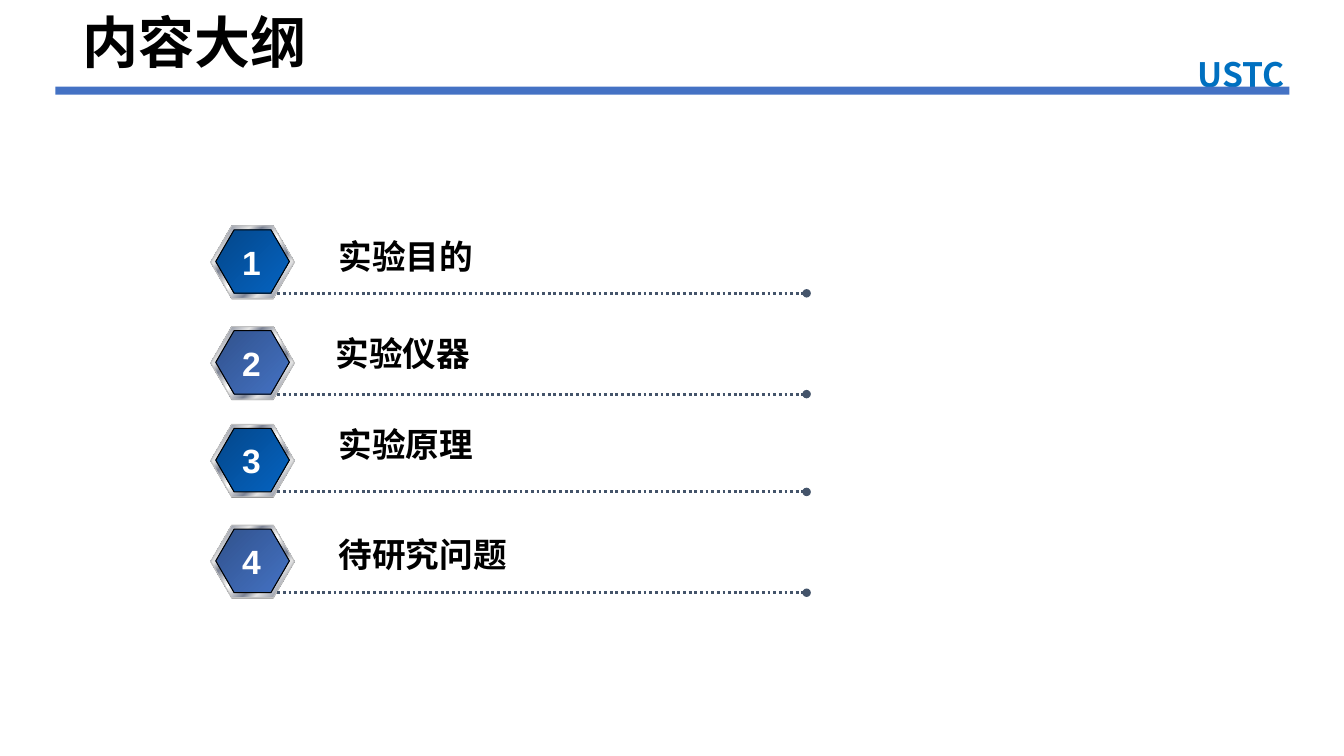
from dataclasses import dataclass

from lxml import etree
from pptx import Presentation
from pptx import util as u
from pptx.dml.color import RGBColor
from pptx.enum import dml, shapes, text
from pptx.oxml import ns

PX = 9144


@dataclass(frozen=True)
class Theme:
    ink: str = "000000"
    white: str = "FFFFFF"
    bar: str = "4472C4"
    school: str = "0070C0"
    rule: str = "44546A"
    shade: str = "808080"
    rim: str = "C0C0C0"
    deep: tuple = ((0, "04478A"), (100, "0563C1"))
    soft: tuple = ((0, "31528C"), (100, "4472C4"))
    steel: tuple = (
        (0, "E6E6E6"), (8, "7D8496"), (26, "E6E6E6"), (34, "7D8496"),
        (46, "E6E6E6"), (50, "FFFFFF"), (54, "E6E6E6"), (66, "7D8496"),
        (74, "E6E6E6"), (92, "7D8496"), (100, "E6E6E6"),
    )
    cjk: str = "Noto Sans CJK SC"
    latin: str = "Arial"
    title_size: int = 40
    item_size: int = 24


T = Theme()


def px(*values):
    return [v * PX for v in values]


def child(parent, tag, **attrs):
    return etree.SubElement(parent, ns.qn(tag), attrs)


def add_text(parent, box, words, size, color, font, align=None, wrap=True):
    sp = parent.add_textbox(*px(*box))
    tf = sp.text_frame
    frame = {"word_wrap": wrap, "auto_size": text.MSO_AUTO_SIZE.SHAPE_TO_FIT_TEXT}
    for name, value in frame.items():
        setattr(tf, name, value)
    p = tf.paragraphs[0]
    p.alignment = align
    r = p.add_run()
    r.text = words
    for name, value in {"size": u.Pt(size), "bold": True, "name": font}.items():
        setattr(r.font, name, value)
    r.font.color.rgb = RGBColor.from_string(color)
    child(r.font._element, "a:ea", typeface=T.cjk)
    return r


def add_shape(parent, kind, box, fill, line=None):
    sp = parent.add_shape(kind, *px(*box))
    sp.shadow.inherit = False
    if isinstance(fill, str):
        sp.fill.solid()
        sp.fill.fore_color.rgb = RGBColor.from_string(fill)
    else:
        sp.fill.gradient()
        grad = sp.element.spPr.find(ns.qn("a:gradFill"))
        for old in list(grad):
            grad.remove(old)
        stops = child(grad, "a:gsLst")
        for pos, color in fill:
            child(child(stops, "a:gs", pos=str(pos * 1000)), "a:srgbClr", val=color)
        child(grad, "a:lin", ang="2700000", scaled="0")
    if line:
        sp.line.color.rgb = RGBColor.from_string(line)
        sp.line.width = u.Pt(0.75)
    else:
        sp.line.fill.background()
    return sp


def add_hexagon(parent, box, fill, line=None):
    sp = add_shape(parent, shapes.MSO_SHAPE.HEXAGON, box, fill, line)
    sp.adjustments[0] = 0.29
    return sp


def add_dotted_rule(parent, x1, x2, y):
    cx = parent.add_connector(shapes.MSO_CONNECTOR.STRAIGHT, *px(x1, y, x2, y))
    cx.line.color.rgb = RGBColor.from_string(T.rule)
    cx.line.width = u.Pt(2)
    cx.line.dash_style = dml.MSO_LINE.ROUND_DOT
    child(cx.line._ln, "a:tailEnd", type="oval")
    child(cx.element.spPr, "a:effectLst")


def header(slide, x, y, w, h):
    band = slide.shapes.add_group_shape().shapes
    r = add_text(band, (x + 1074, y + 46, 204, 50), "USTC", T.item_size, T.school,
                 T.cjk, text.PP_ALIGN.CENTER)
    outline = etree.Element(ns.qn("a:ln"), w=str(u.Pt(0.75)))
    child(child(outline, "a:solidFill"), "a:srgbClr", val=T.white)
    r.font._element.insert(0, outline)
    add_shape(band, shapes.MSO_SHAPE.RECTANGLE, (x, y + h - 8, w, 8), T.bar)
    add_text(slide.shapes, (x + 17, y, 260, 77), "内容大纲", T.title_size, T.ink, T.cjk)


def outline_row(slide, x, y, w, number, label, label_box, font, fill):
    row = slide.shapes.add_group_shape().shapes
    add_hexagon(row, (x, y + 1, 83, 72), T.shade)
    add_hexagon(row, (x, y, 83, 72), T.steel, T.rim)
    add_hexagon(row, (x + 5, y + 4, 73, 63), fill, T.ink)
    add_dotted_rule(row, x + 66, x + w, y + 67)
    dx, dy, label_w = label_box
    add_text(row, (x + dx, y + dy, label_w, 51), label, T.item_size, T.ink, font,
             wrap=False)
    add_text(row, (x + 21, y + 11, 39, 50), str(number), T.item_size, T.white,
             T.latin, text.PP_ALIGN.CENTER, False)


def outline_list(slide, x, y, w):
    items = [
        (0, "实验目的", (117, 5, 165), T.latin),
        (100, "实验仪器", (114, 1, 156), T.cjk),
        (197, "实验原理", (117, -5, 156), T.cjk),
        (297, "待研究问题", (117, 4, 189), T.cjk),
    ]
    for i, (dy, label, label_box, font) in enumerate(items):
        fill = (T.deep, T.soft)[i % 2]
        outline_row(slide, x, y + dy, w, i + 1, label, label_box, font, fill)


def main():
    prs = Presentation()
    prs.slide_width, prs.slide_height = px(1333, 750)
    slide = prs.slides.add_slide(prs.slide_layouts[6])
    header(slide, 55, 3, 1224, 91)
    outline_list(slide, 209, 224, 591)
    prs.save("out.pptx")


if __name__ == "__main__":
    main()
